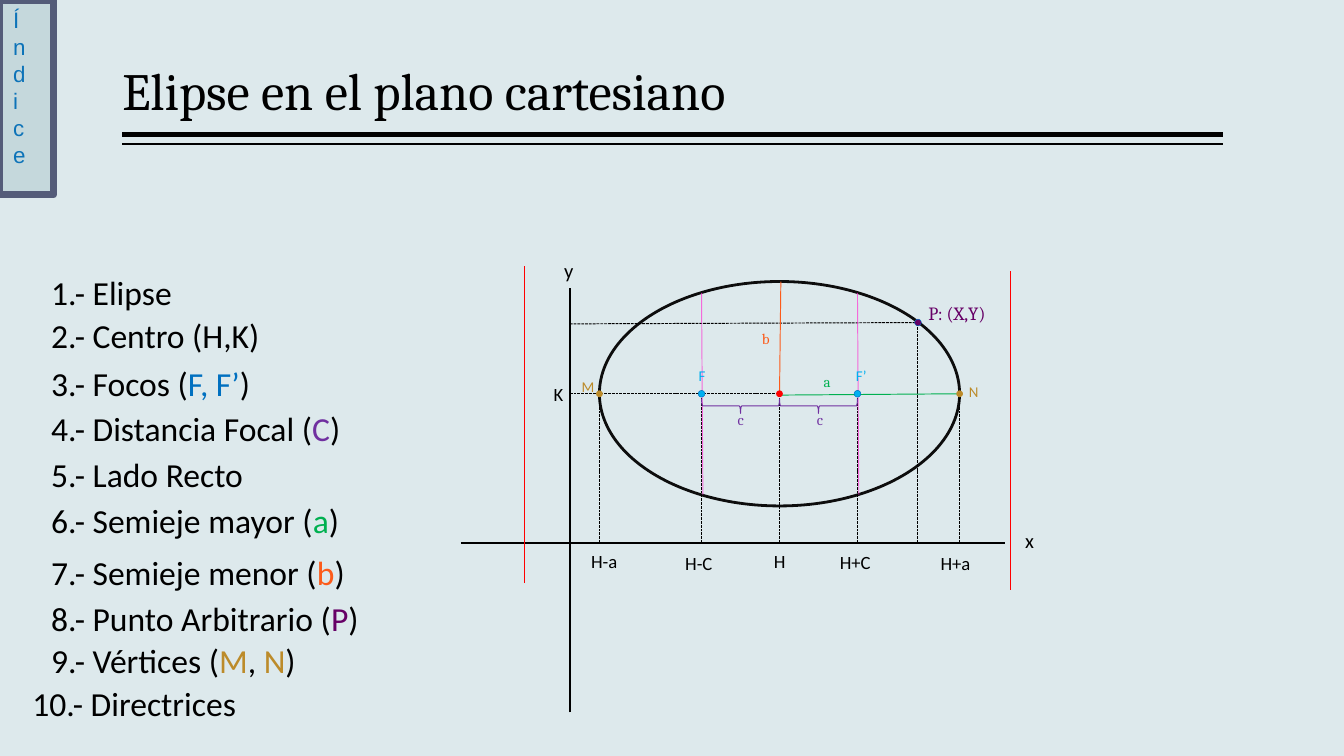
import pptx
import pptx.dml.color
import pptx.enum.dml
import pptx.enum.shapes
import pptx.enum.text
import pptx.oxml.ns
import pptx.util
from lxml import etree

Inches = pptx.util.Inches
Pt = pptx.util.Pt
SHAPE = pptx.enum.shapes.MSO_SHAPE
AUTO_SIZE = pptx.enum.text.MSO_AUTO_SIZE
ANCHOR = pptx.enum.text.MSO_ANCHOR
qn = pptx.oxml.ns.qn

BLACK, RED, SKY, BLUE = "000000", "FF0000", "00B0F0", "0070C0"
PURPLE, GREEN, ORANGE = "7030A0", "00B050", "FC5B1A"
GOLD, PLUM, PINK = "BC8B2A", "660066", "FF2FD2"

CENTER_X, CENTER_Y = 5.8, 2.93
SEMI_MAJOR, SEMI_MINOR, FOCAL = 1.34, 0.835, 0.58
AXIS_X, AXIS_Y = 4.24, 4.04
POINT_X, POINT_Y = 6.83, 2.4
TILT = 0.01

ITEMS = [
    (0, [("1.- Elipse", BLACK)]),
    (1.8, [("2.- Centro (H,K)", BLACK)]),
    (3.7, [("3.- Focos (", BLACK), ("F, F’", BLUE), (")", BLACK)]),
    (3, [("4.- Distancia Focal (", BLACK), ("C", PURPLE), (")", BLACK)]),
    (3, [("5.- Lado Recto", BLACK)]),
    (3, [("6.- Semieje mayor (", BLACK), ("a", GREEN), (")", BLACK)]),
    (6.1, [("7.- Semieje menor (", BLACK), ("b", ORANGE), (")", BLACK)]),
    (3, [("8.- Punto Arbitrario (", BLACK), ("P", PLUM), (")", BLACK)]),
    (1, [("9.- Vértices (", BLACK), ("M", GOLD), (", ", BLACK), ("N", GOLD), (")", BLACK)]),
    (1.4, [("10.- Directrices", BLACK)]),
]

LABELS = [
    ("x", 7.53, 3.9, 0.3, 11, "Calibri", BLACK),
    ("y", 4.1, 1.89, 0.26, 11, "Calibri", BLACK),
    ("H", 5.66, 4.04, 0.3, 10, "Calibri", BLACK),
    ("K", 4.02, 2.8, 0.29, 10, "Calibri", BLACK),
    ("H-C", 5, 4.06, 0.45, 10, "Calibri", BLACK),
    ("H+C", 6.15, 4.05, 0.49, 10, "Calibri", BLACK),
    ("H-a", 4.3, 4.04, 0.43, 10, "Calibri", BLACK),
    ("H+a", 6.9, 4.06, 0.46, 10, "Calibri", BLACK),
    ("c", 5.39, 3.01, 0.23, 8, "Cambria", PURPLE),
    ("c", 5.98, 3.01, 0.23, 8, "Cambria", PURPLE),
    ("b", 5.57, 2.4, 0.26, 8, "Cambria", ORANGE),
    ("a", 6.03, 2.72, 0.23, 8, "Cambria", GREEN),
    ("F", 5.1, 2.68, 0.27, 8, "Calibri", SKY),
    ("F’", 6.27, 2.68, 0.29, 8, "Calibri", SKY),
    ("M", 4.23, 2.76, 0.29, 8, "Calibri", GOLD),
    ("N", 7.11, 2.8, 0.28, 8, "Calibri", GOLD),
    ("P: (X,Y)", 6.81, 2.2, 0.65, 10, "Cambria", PLUM),
]


def rgb(value):
    return pptx.dml.color.RGBColor.from_string(value)


def place(part, left, top, width, height):
    part.left, part.top = Inches(left), Inches(top)
    part.width, part.height = Inches(width), Inches(height)


def set_alpha(fill_owner, percent):
    color = fill_owner.find(".//" + qn("a:srgbClr"))
    etree.SubElement(color, qn("a:alpha")).set("val", str(percent * 1000))


def style_font(paragraph, size, face, color):
    paragraph.font.size = Pt(size)
    paragraph.font.name = face
    paragraph.font.color.rgb = rgb(color)


def add_line(slide, start, end, color=BLACK, width=0.5, dashed=False, alpha=None):
    line = slide.shapes.add_connector(
        pptx.enum.shapes.MSO_CONNECTOR.STRAIGHT, *map(Inches, start + end))
    line.line.color.rgb = rgb(color)
    line.line.width = Pt(width)
    if dashed:
        line.line.dash_style = pptx.enum.dml.MSO_LINE.SQUARE_DOT
    if alpha:
        set_alpha(line.line._ln, alpha)
    etree.SubElement(line._element.spPr, qn("a:effectLst"))


def add_figure(slide, kind, box, fill=None, line=None, width=0.25):
    figure = slide.shapes.add_shape(kind, *map(Inches, box))
    figure.shadow.inherit = False
    if fill:
        figure.fill.solid()
        figure.fill.fore_color.rgb = rgb(fill)
    else:
        figure.fill.background()
    if line:
        figure.line.color.rgb = rgb(line)
        figure.line.width = Pt(width)
    else:
        figure.line.fill.background()
    return figure


def add_dot(slide, x, y, fill, line=None):
    add_figure(slide, SHAPE.OVAL, (x - 0.025, y - 0.025, 0.05, 0.05), fill, line)


def add_brace(slide, middle):
    brace = add_figure(slide, SHAPE.LEFT_BRACE,
                       (middle - 0.055, 2.73, 0.11, FOCAL), line=PURPLE, width=0.5)
    brace.rotation = 270


def add_label(slide, text, left, top, width, size, face, color):
    height = 0.24 if size == 8 else 0.27
    label = slide.shapes.add_textbox(*map(Inches, (left, top, width, height)))
    label.text_frame.word_wrap = False
    label.text_frame.auto_size = AUTO_SIZE.SHAPE_TO_FIT_TEXT
    paragraph = label.text_frame.paragraphs[0]
    paragraph.text = text
    if size == 11:
        paragraph.line_spacing = 0.9
    style_font(paragraph, size, face, color)


def add_title(slide):
    title = slide.shapes.title
    place(title, 0.91, 0.06, 8.19, 0.9)
    frame = title.text_frame
    frame.vertical_anchor = ANCHOR.BOTTOM
    frame.auto_size = AUTO_SIZE.NONE
    frame.margin_left = frame.margin_right = 0
    paragraph = frame.paragraphs[0]
    paragraph.text = "Elipse en el plano cartesiano"
    paragraph.alignment = pptx.enum.text.PP_ALIGN.LEFT
    paragraph.line_spacing = 0.9
    style_font(paragraph, 28, "Cambria", BLACK)
    for y, width in ((1, 3), (1.07, 1)):
        add_line(slide, (0.91, y), (9.1, y), width=width)


def add_elements_list(slide):
    elements = slide.placeholders[1]
    place(elements, 0.14, 1.97, 3.2, 3.46)
    frame = elements.text_frame
    frame.auto_size = AUTO_SIZE.NONE
    frame.vertical_anchor = ANCHOR.TOP
    for index, (gap, pieces) in enumerate(ITEMS):
        paragraph = frame.paragraphs[0] if index == 0 else frame.add_paragraph()
        paragraph.space_before = Pt(gap)
        paragraph.font.size = Pt(18)
        paragraph.font.name = "Calibri"
        properties = paragraph._p.get_or_add_pPr()
        is_last = index == len(ITEMS) - 1
        properties.set("marL", str(0 if is_last else Inches(0.14)))
        properties.set("indent", "0")
        properties.insert_element_before(
            etree.SubElement(properties, qn("a:buNone")), "a:defRPr")
        for text, color in pieces:
            run = paragraph.add_run()
            run.text = text
            run.font.color.rgb = rgb(color)


def add_index_tab(slide):
    index = slide.shapes.add_textbox(0, 0, Inches(0.43), Inches(1.57))
    index.text_frame.word_wrap = True
    index.text_frame._txBody.bodyPr.set("vert", "wordArtVert")
    paragraph = index.text_frame.paragraphs[0]
    paragraph.text = "Índice"
    style_font(paragraph, 12, "Arial", BLUE)
    tab = add_figure(slide, SHAPE.RECTANGLE, (0, 0, 0.4, 1.45), "528693", "545C79", 3.78)
    set_alpha(tab._element.spPr.find(qn("a:solidFill")), 17)


def add_ellipse_diagram(slide):
    foci = (CENTER_X - FOCAL, CENTER_X + FOCAL)
    vertices = (CENTER_X - SEMI_MAJOR, CENTER_X + SEMI_MAJOR)
    add_line(slide, (AXIS_X, 5.3), (AXIS_X, 2.14), width=1)
    add_line(slide, (3.43, AXIS_Y), (7.48, AXIS_Y), width=1)
    add_figure(slide, SHAPE.OVAL,
               (vertices[0], CENTER_Y - SEMI_MINOR, 2 * SEMI_MAJOR, 2 * SEMI_MINOR),
               line="0D0D0D", width=1.5)
    for x in (CENTER_X, *foci, *vertices):
        add_line(slide, (x, AXIS_Y), (x, 2.96), dashed=True)
    add_line(slide, (POINT_X, AXIS_Y), (POINT_X, POINT_Y), dashed=True)
    add_line(slide, (AXIS_X, POINT_Y + TILT), (POINT_X, POINT_Y), dashed=True)
    add_line(slide, (AXIS_X, CENTER_Y), (CENTER_X, CENTER_Y), dashed=True)
    add_line(slide, (CENTER_X, CENTER_Y + TILT), (vertices[1], CENTER_Y), GREEN)
    add_line(slide, (CENTER_X + TILT, CENTER_Y - SEMI_MINOR), (CENTER_X, CENTER_Y), ORANGE)
    for x in foci:
        add_line(slide, (x + TILT, 3.68), (x, 2.18), PINK, alpha=68)
        add_dot(slide, x, CENTER_Y, SKY, BLUE)
        add_brace(slide, (x + CENTER_X) / 2)
    for x in vertices:
        add_dot(slide, x, CENTER_Y, GOLD)
    add_dot(slide, CENTER_X, CENTER_Y, RED)
    add_dot(slide, POINT_X, POINT_Y, PLUM, BLUE)
    for x, top, bottom in ((3.9, 1.98, 4.34), (7.52, 2.02, 4.39)):
        add_line(slide, (x, bottom), (x, top), RED)
    for label in LABELS:
        add_label(slide, *label)


def main():
    deck = pptx.Presentation()
    deck.slide_width = Inches(10)
    deck.slide_height = deck.slide_width * 9 // 16
    slide = deck.slides.add_slide(deck.slide_layouts[1])
    slide.background.fill.solid()
    slide.background.fill.fore_color.rgb = rgb("DDE9EC")
    add_title(slide)
    add_ellipse_diagram(slide)
    add_elements_list(slide)
    add_index_tab(slide)
    deck.save("out.pptx")


if __name__ == "__main__":
    main()
